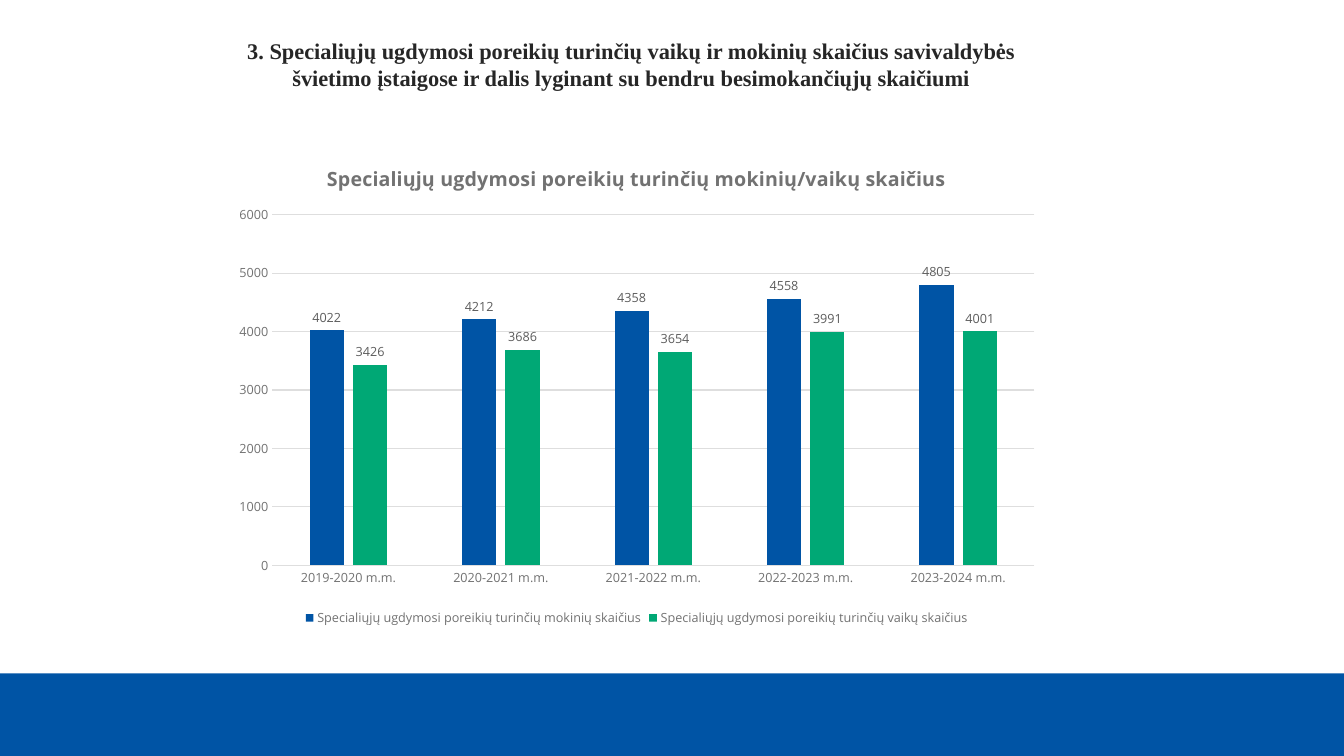
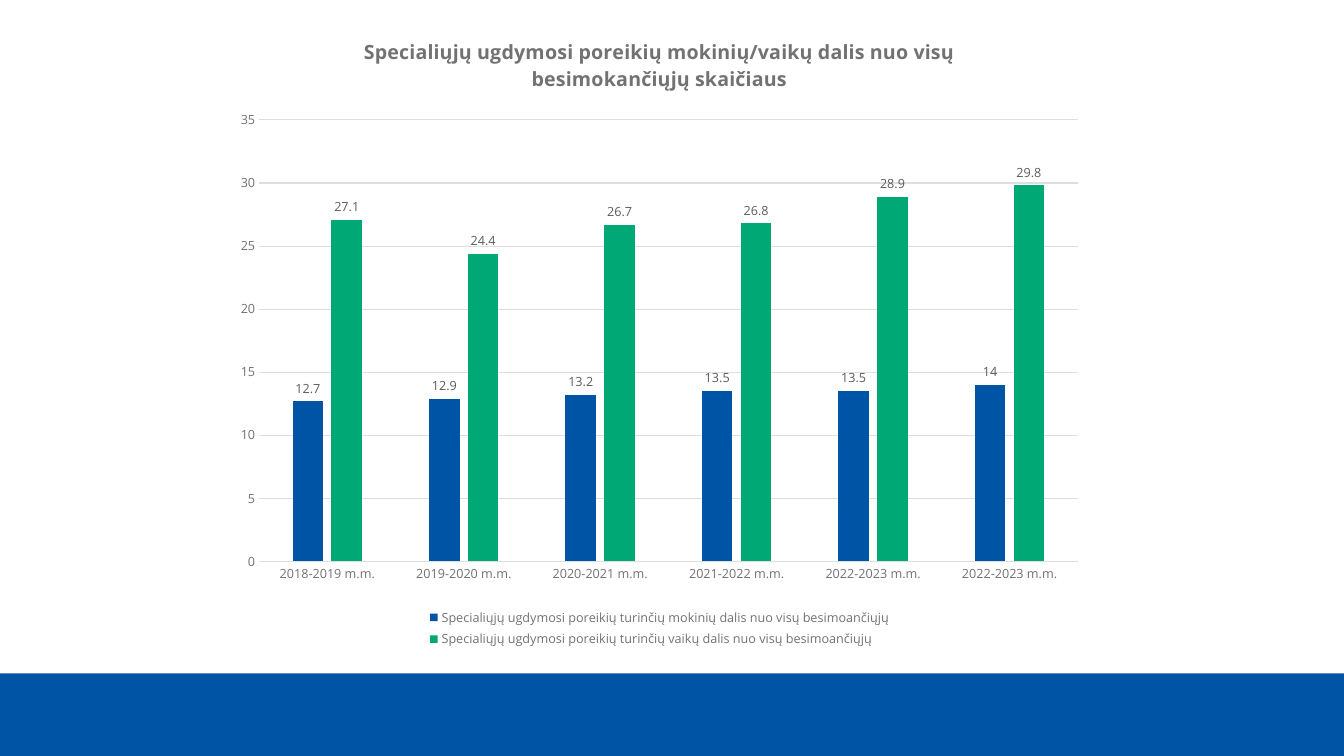
from lxml import etree
from pptx import Presentation
from pptx.chart.data import CategoryChartData
from pptx.dml.color import RGBColor
from pptx.enum.chart import XL_CHART_TYPE, XL_LABEL_POSITION, XL_LEGEND_POSITION, XL_TICK_MARK
from pptx.enum.shapes import MSO_SHAPE
from pptx.enum.text import MSO_ANCHOR, MSO_AUTO_SIZE, PP_ALIGN
from pptx.oxml.ns import qn
from pptx.util import Inches, Pt

COLUMNS = XL_CHART_TYPE.COLUMN_CLUSTERED
OUTSIDE = XL_LABEL_POSITION.OUTSIDE_END
BOTTOM = XL_LEGEND_POSITION.BOTTOM
NO_TICK = XL_TICK_MARK.NONE
RECT = MSO_SHAPE.RECTANGLE
CENTER = PP_ALIGN.CENTER

BLUE = RGBColor(0x00, 0x54, 0xA5)
GREEN = RGBColor(0x00, 0xA8, 0x75)
DARK = RGBColor(0x26, 0x26, 0x26)
GRAY = RGBColor(0x72, 0x72, 0x72)
LABEL_GRAY = RGBColor(0x5C, 0x5C, 0x5C)
GRID = RGBColor(0xDE, 0xDE, 0xDE)

TITLE_FONT = "Times New Roman"
CHART_FONT = "Open Sans"
TITLE_ONLY, BLANK = 5, 6


class Deck:
    """Shared style and the slide being built."""

    def __init__(self):
        self.prs = Presentation()
        self.prs.slide_width = Inches(13.33)
        self.prs.slide_height = Inches(7.5)
        self.s = None

    def slide(self, layout):
        self.s = self.prs.slides.add_slide(self.prs.slide_layouts[layout])
        band = self.s.shapes.add_shape(RECT, 0, Inches(6.68), self.prs.slide_width, Inches(0.82))
        band.shadow.inherit = False
        band.fill.solid()
        band.fill.fore_color.rgb = BLUE
        band.line.fill.background()

    @staticmethod
    def font(font, size, color, name=CHART_FONT, bold=False):
        font.size, font.name, font.bold = Pt(size), name, bold
        font.color.rgb = color

    @staticmethod
    def rule(line):
        line.color.rgb = GRID
        line.width = Pt(0.75)

    def title(self, text, box):
        sp = self.s.shapes.title
        sp.left, sp.top, sp.width, sp.height = [Inches(v) for v in box]
        tf = sp.text_frame
        tf.word_wrap = True
        tf.auto_size = MSO_AUTO_SIZE.NONE
        tf.vertical_anchor = MSO_ANCHOR.TOP
        p = tf.paragraphs[0]
        p.alignment = CENTER
        r = p.add_run()
        r.text = text
        self.font(r.font, 16, DARK, TITLE_FONT, True)

    def column_chart(self, title, box, plot_box, cats, series, top, step):
        data = CategoryChartData()
        data.categories = cats
        for name, values in series:
            data.add_series(name, values)
        chart = self.s.shapes.add_chart(COLUMNS, *[Inches(v) for v in box], data).chart
        self.font(chart.font, 10, DARK)

        # Chart title and legend
        chart.has_title = True
        r = chart.chart_title.text_frame.paragraphs[0].add_run()
        r.text = title
        self.font(r.font, 14, GRAY, bold=True)
        chart.chart_title.include_in_layout = False
        chart.has_legend = True
        chart.legend.position = BOTTOM
        chart.legend.include_in_layout = False
        self.font(chart.legend.font, 9, GRAY)

        # Axes
        cat, val = chart.category_axis, chart.value_axis
        for axis in (cat, val):
            axis.major_tick_mark = axis.minor_tick_mark = NO_TICK
            self.font(axis.tick_labels.font, 9, GRAY)
        self.rule(cat.format.line)
        val.format.line.fill.background()
        val.has_major_gridlines = True
        self.rule(val.major_gridlines.format.line)
        val.minimum_scale, val.maximum_scale, val.major_unit = 0, top, step

        # Columns and their values
        plot = chart.plots[0]
        plot.vary_by_categories = False
        plot.gap_width, plot.overlap = 219, -27
        for ser, color in zip(plot.series, (BLUE, GREEN)):
            ser.format.fill.solid()
            ser.format.fill.fore_color.rgb = color
            labels = ser.data_labels
            labels.show_value = True
            labels.position = OUTSIDE
            labels.number_format = "General"
            labels.number_format_is_linked = False
            self.font(labels.font, 9, LABEL_GRAY)
        self.place_plot(chart, box, plot_box)

    @staticmethod
    def place_plot(chart, box, plot_box):
        """Fix the inner plot area, given in slide inches."""
        area = chart.element.find(".//" + qn("c:plotArea"))
        for old in area.findall(qn("c:layout")):
            area.remove(old)
        layout = etree.Element(qn("c:layout"))
        area.insert(0, layout)
        manual = etree.SubElement(layout, qn("c:manualLayout"))
        left, top, width, height = box
        x, y, w, h = plot_box
        for tag, value in (("layoutTarget", "inner"), ("xMode", "edge"), ("yMode", "edge"),
                           ("x", (x - left) / width), ("y", (y - top) / height),
                           ("w", w / width), ("h", h / height)):
            etree.SubElement(manual, qn("c:" + tag)).set("val", str(value))


def main():
    deck = Deck()

    # Number of pupils and children
    deck.slide(TITLE_ONLY)
    deck.title("3. Specialiųjų ugdymosi poreikių turinčių vaikų ir mokinių skaičius savivaldybės "
               "švietimo įstaigose ir dalis lyginant su bendru besimokančiųjų skaičiumi",
               (2.21, 0.32, 8.1, 0.64))
    deck.column_chart(
        "Specialiųjų ugdymosi poreikių turinčių mokinių/vaikų skaičius",
        (2.21, 1.43, 8.21, 4.83), (2.7, 2.13, 7.56, 3.48),
        [f"{y}-{y + 1} m.m." for y in range(2019, 2024)],
        [("Specialiųjų ugdymosi poreikių turinčių mokinių skaičius", (4022, 4212, 4358, 4558, 4805)),
         ("Specialiųjų ugdymosi poreikių turinčių vaikų skaičius", (3426, 3686, 3654, 3991, 4001))],
        6000, 1000)

    # Share of all learners
    deck.slide(BLANK)
    deck.column_chart(
        "Specialiųjų ugdymosi poreikių mokinių/vaikų dalis nuo visų besimokančiųjų skaičiaus",
        (2.22, 0.14, 8.64, 6.33), (2.57, 1.19, 8.12, 4.38),
        [f"{y}-{y + 1} m.m." for y in (2018, 2019, 2020, 2021, 2022, 2022)],
        [("Specialiųjų ugdymosi poreikių turinčių mokinių dalis nuo visų besimoančiųjų",
          (12.7, 12.9, 13.2, 13.5, 13.5, 14)),
         ("Specialiųjų ugdymosi poreikių turinčių vaikų dalis nuo visų besimoančiųjų",
          (27.1, 24.4, 26.7, 26.8, 28.9, 29.8))],
        35, 5)

    deck.prs.save("out.pptx")


if __name__ == "__main__":
    main()
